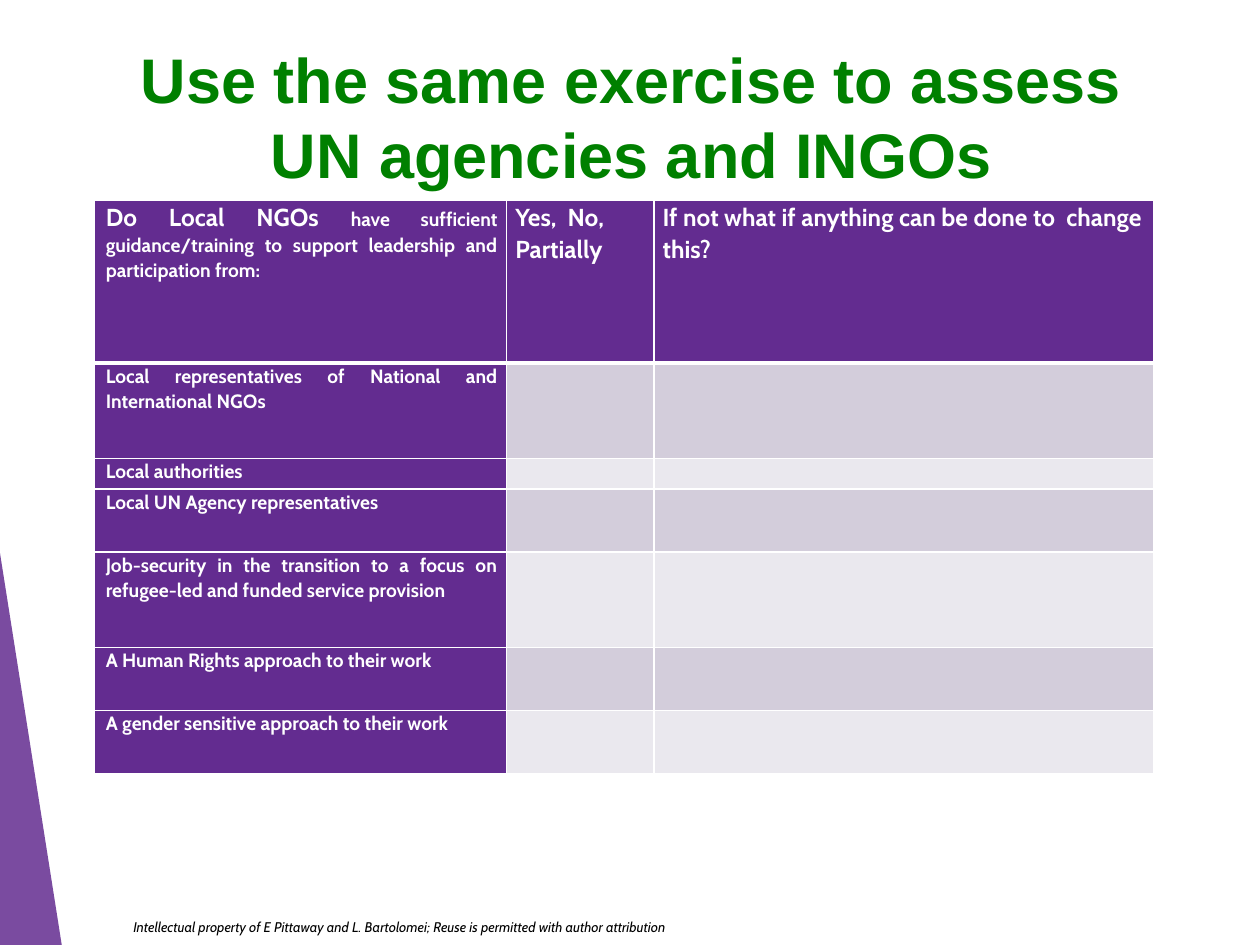
from lxml.etree import SubElement
from pptx import Presentation
from pptx.dml.color import RGBColor
from pptx.enum.text import MSO_ANCHOR, PP_ALIGN
from pptx.oxml.ns import qn
from pptx.util import Inches, Pt

PURPLE = RGBColor(0x63, 0x2C, 0x90)
GREEN = RGBColor(0x00, 0x80, 0x00)
WHITE = RGBColor(0xFF, 0xFF, 0xFF)
BLACK = RGBColor(0x00, 0x00, 0x00)
BANDS = [RGBColor(0xD3, 0xCD, 0xDB), RGBColor(0xEA, 0xE8, 0xEE)]

TITLE = "Use the same exercise to assess UN agencies and INGOs"
CREDIT = ("Intellectual property of E Pittaway and L. Bartolomei; "
          "Reuse is permitted with author attribution")

LARGE, SMALL = 14, 11
# Each cell is a list of (text, size) runs.
HEADER = [
    [("Do Local NGOs ", LARGE),
     ("have sufficient guidance/training to support leadership "
      "and participation from:", SMALL)],
    [("Yes,  No, Partially", LARGE)],
    [("If not what if anything can be done to  change this?", LARGE)],
]
# Each row is its topic and its height.
TOPICS = [
    ("Local representatives of National and International NGOs", 0.76),
    ("Local authorities", 0.24),
    ("Local UN Agency representatives", 0.5),
    ("Job-security in the transition to a focus on refugee-led "
     "and funded service provision", 0.76),
    ("A Human Rights approach to their work", 0.5),
    ("A gender sensitive approach to their work", 0.5),
]
HEADER_HEIGHT = 1.29
COLUMN_WIDTHS = [3.27, 1.17, 3.97]
TABLE_LEFT, TABLE_TOP = 0.75, 1.59
CELL_MARGINS = {"margin_left": Inches(0.07), "margin_right": Inches(0.07),
                "margin_top": 0, "margin_bottom": 0}


def add_run(paragraph, text, color, **formats):
    run = paragraph.add_run()
    run.text = text
    run.font.color.rgb = color
    for name, value in formats.items():
        setattr(run.font, name, value)


def add_borders(cell, widths):
    """Draw white borders; widths gives points for L, R, T and B."""
    properties = cell._tc.get_or_add_tcPr()
    for side, width in widths.items():
        line = SubElement(properties, qn(f"a:ln{side}"), w=str(Pt(width)))
        fill = SubElement(line, qn("a:solidFill"))
        SubElement(fill, qn("a:srgbClr"), val=str(WHITE))


def fill_cell(cell, runs, color, borders, justified):
    for name, value in CELL_MARGINS.items():
        setattr(cell, name, value)
    add_borders(cell, borders)
    cell.fill.solid()
    cell.fill.fore_color.rgb = color
    paragraph = cell.text_frame.paragraphs[0]
    if not runs:
        SubElement(paragraph._p, qn("a:endParaRPr"), sz=str(SMALL * 100))
        return
    paragraph.line_spacing = 1.07
    paragraph.space_after = Pt(8)
    if justified:
        paragraph.alignment = PP_ALIGN.JUSTIFY
        paragraph._p.get_or_add_pPr().set("marL", str(Inches(0.02)))
    for text, size in runs:
        add_run(paragraph, text, WHITE, name="Cabin", size=Pt(size), bold=True)


def add_title(slide):
    title = slide.shapes.title
    title.left, title.top = Inches(0.75), Inches(0.27)
    title.width, title.height = Inches(8.52), Inches(0.69)
    frame = title.text_frame
    frame.word_wrap = True
    frame.vertical_anchor = MSO_ANCHOR.TOP
    paragraph = frame.paragraphs[0]
    paragraph.alignment = PP_ALIGN.CENTER
    add_run(paragraph, TITLE, GREEN, name="Arial", size=Pt(36), bold=True)


def add_corner_wedge(slide):
    builder = slide.shapes.build_freeform(0, Inches(4.39))
    builder.add_line_segments([(Inches(0.49), Inches(7.5)), (0, Inches(7.5))])
    wedge = builder.convert_to_shape()
    wedge.shadow.inherit = False
    wedge.fill.solid()
    wedge.fill.fore_color.rgb = PURPLE
    wedge.line.fill.background()
    color = wedge._element.spPr.find(qn("a:solidFill")).find(qn("a:srgbClr"))
    SubElement(color, qn("a:alpha"), val="85000")


def add_credit(slide):
    box = slide.shapes.add_textbox(Inches(0.96), Inches(7.24),
                                   Inches(5.8), Inches(0.23))
    box.text_frame.word_wrap = True
    add_run(box.text_frame.paragraphs[0], CREDIT, BLACK,
            name="Cabin", size=Pt(8), italic=True)


def add_assessment_table(slide):
    rows = [HEADER] + [[[(topic, SMALL)], [], []] for topic, _ in TOPICS]
    heights = [HEADER_HEIGHT] + [height for _, height in TOPICS]
    table = slide.shapes.add_table(
        len(rows), len(COLUMN_WIDTHS), Inches(TABLE_LEFT), Inches(TABLE_TOP),
        Inches(sum(COLUMN_WIDTHS)), Inches(sum(heights))).table
    table.first_col = True
    for column, width in zip(table.columns, COLUMN_WIDTHS):
        column.width = Inches(width)
    for r, (row, height) in enumerate(zip(rows, heights)):
        table.rows[r].height = Inches(height)
        borders = {"L": 1, "R": 1, "T": 3 if r == 1 else 1,
                   "B": 3 if r == 0 else 1}
        for c, runs in enumerate(row):
            color = PURPLE if r == 0 or c == 0 else BANDS[(r - 1) % 2]
            fill_cell(table.cell(r, c), runs, color, borders, c == 0)


def main():
    presentation = Presentation()
    presentation.slide_width, presentation.slide_height = Inches(10), Inches(7.5)
    slide = presentation.slides.add_slide(presentation.slide_layouts[5])
    add_corner_wedge(slide)
    add_credit(slide)
    add_title(slide)
    add_assessment_table(slide)
    presentation.save("out.pptx")


if __name__ == "__main__":
    main()
